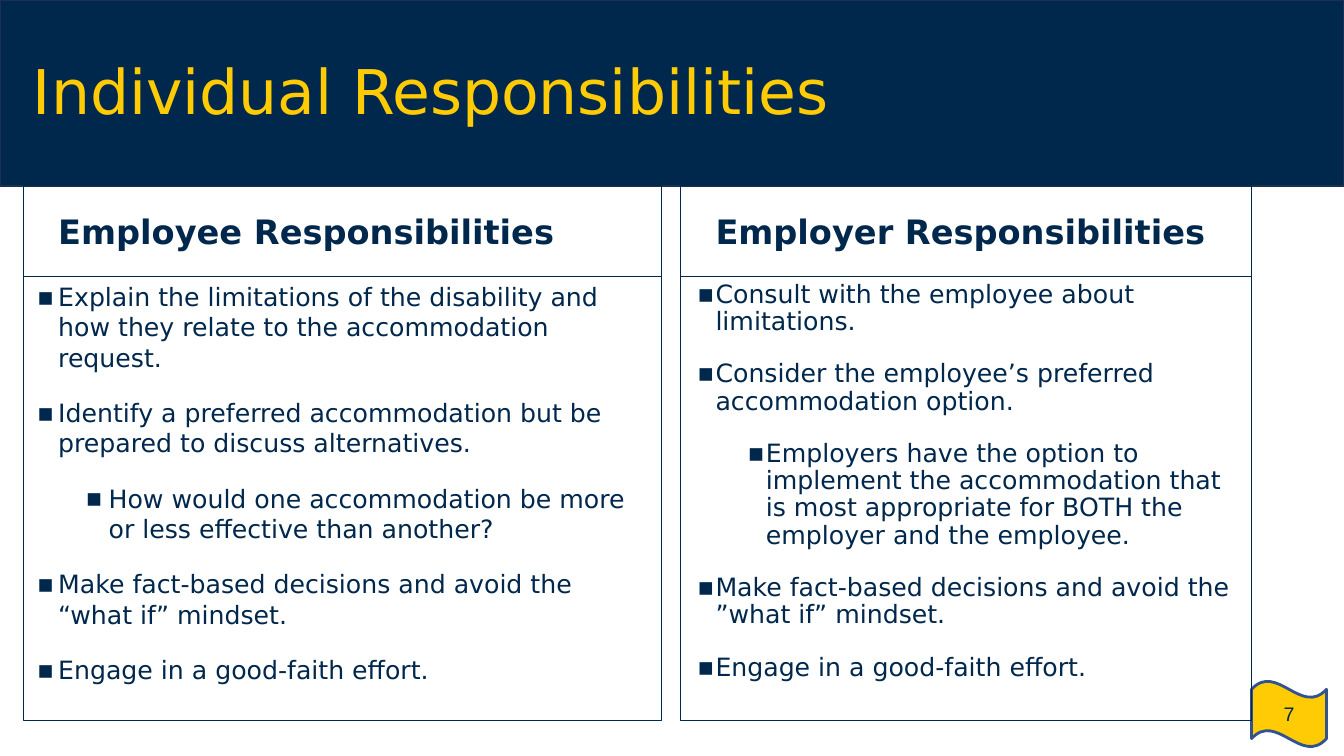
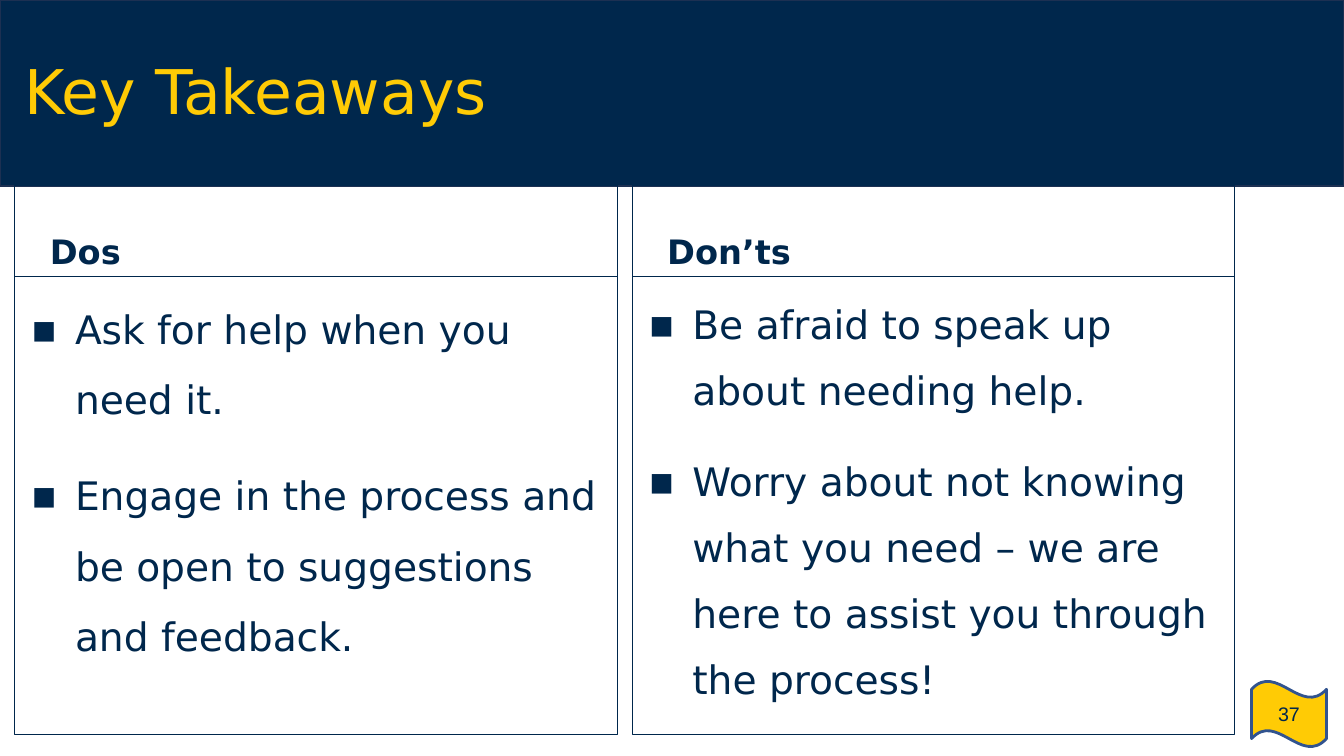
from dataclasses import dataclass

from lxml import etree
from pptx import Presentation
from pptx.dml.color import RGBColor
from pptx.enum.shapes import MSO_SHAPE
from pptx.enum.text import MSO_ANCHOR, PP_ALIGN
from pptx.oxml.ns import qn
from pptx.util import Pt

RECT, WAVE = MSO_SHAPE.RECTANGLE, MSO_SHAPE.WAVE
TOP, MIDDLE, BOTTOM = MSO_ANCHOR.TOP, MSO_ANCHOR.MIDDLE, MSO_ANCHOR.BOTTOM
LEFT, CENTER = PP_ALIGN.LEFT, PP_ALIGN.CENTER


@dataclass(frozen=True)
class Theme:
    navy: str = "00274C"
    maize: str = "FFCB05"
    band_line: str = "1C3052"
    wave_line: str = "31538F"
    font: str = "DejaVu Sans"
    number_font: str = "Arial"
    title_size: int = 44
    heading_size: int = 24
    number_size: int = 14
    gap: int = 18


THEME = Theme()
SLIDE_W, SLIDE_H = 960, 540
BAND_H = 133
HEAD_TOP, HEAD_H = 132.5, 65
BODY_TOP = HEAD_TOP + HEAD_H

# Bullets are (level, text); indents are (left, first line) for each level.
SLIDES = [
    dict(
        title="Individual Responsibilities", number="7", title_box=(16.5, 15, 828, 104.5),
        anchor=MIDDLE, body_h=317.5, size=18,
        columns=[
            dict(
                heading="Employee Responsibilities", x=16.5, w=456, spacing=1.0,
                indents=[(18, -15), (54, -16.5)],
                bullets=[
                    (0, "Explain the limitations of the disability and how they relate "
                        "to the accommodation request."),
                    (0, "Identify a preferred accommodation but be prepared to discuss "
                        "alternatives."),
                    (1, "How would one accommodation be more or less effective than another?"),
                    (0, "Make fact-based decisions and avoid the “what if” mindset."),
                    (0, "Engage in a good-faith effort."),
                ],
            ),
            dict(
                heading="Employer Responsibilities", x=486, w=408, spacing=0.9,
                indents=[(18, -13), (54, -13)],
                bullets=[
                    (0, "Consult with the employee about limitations."),
                    (0, "Consider the employee’s preferred accommodation option."),
                    (1, "Employers have the option to implement the accommodation that is "
                        "most appropriate for BOTH the employer and the employee."),
                    (0, "Make fact-based decisions and avoid the ”what if” mindset."),
                    (0, "Engage in a good-faith effort."),
                ],
            ),
        ],
    ),
    dict(
        title="Key Takeaways", number="37", title_box=(10.5, 15.5, 775.5, 104.5),
        anchor=BOTTOM, body_h=327.5, size=28,
        columns=[
            dict(
                heading="Dos", x=10.5, w=430.5, spacing=1.5, indents=[(36, -31.5)],
                bullets=[
                    (0, "Ask for help when you need it."),
                    (0, "Engage in the process and be open to suggestions and feedback."),
                ],
            ),
            dict(
                heading="Don’ts", x=451.5, w=430.5, spacing=1.4, indents=[(36, -31.5)],
                bullets=[
                    (0, "Be afraid to speak up about needing help."),
                    (0, "Worry about not knowing what you need – we are here to assist "
                        "you through the process!"),
                ],
            ),
        ],
    ),
]


def add_box(s, box, anchor=TOP, shape=RECT, fill=None, line=None, line_w=0.75):
    """Add a shape, unfilled and unlined unless told otherwise, ready for text."""
    sp = s.shapes.add_shape(shape, *(Pt(v) for v in box))
    sp.shadow.inherit = False
    if fill:
        sp.fill.solid()
        sp.fill.fore_color.rgb = RGBColor.from_string(fill)
    else:
        sp.fill.background()
    if line:
        sp.line.color.rgb = RGBColor.from_string(line)
        sp.line.width = Pt(line_w)
    else:
        sp.line.fill.background()
    sp.text_frame.word_wrap = True
    sp.text_frame.vertical_anchor = anchor
    return sp


def add_text(sp, text, size, color=THEME.navy, font=THEME.font, bold=False, align=LEFT,
             spacing=1.0, before=0, indent=(0, 0), level=0, bullet=False):
    """Write one paragraph, filling the empty first one before adding more."""
    tf = sp.text_frame
    p = tf.add_paragraph() if tf.text else tf.paragraphs[0]
    p.alignment, p.level = align, level
    p.line_spacing, p.space_before = spacing, Pt(before)
    pPr = p._p.get_or_add_pPr()
    pPr.set("marL", str(Pt(indent[0])))
    pPr.set("indent", str(Pt(indent[1])))
    if bullet:
        color_el = etree.SubElement(pPr, qn("a:buClr"))
        etree.SubElement(color_el, qn("a:srgbClr"), val=color)
        etree.SubElement(pPr, qn("a:buFont"), typeface=font)
        etree.SubElement(pPr, qn("a:buChar"), char="▪")
    r = p.add_run()
    r.text = text
    r.font.name, r.font.size, r.font.bold = font, Pt(size), bold
    r.font.color.rgb = RGBColor.from_string(color)


prs = Presentation()
prs.slide_width, prs.slide_height = Pt(SLIDE_W), Pt(SLIDE_H)

for page in SLIDES:
    s = prs.slides.add_slide(prs.slide_layouts[6])

    add_box(s, (0, 0, SLIDE_W, BAND_H), fill=THEME.navy, line=THEME.band_line, line_w=1)
    wave = add_box(s, (894, 486.5, 53.5, 47), MIDDLE, WAVE, THEME.maize, THEME.wave_line, 2)
    add_text(wave, page["number"], THEME.number_size, font=THEME.number_font, align=CENTER)

    title = add_box(s, page["title_box"], MIDDLE)
    add_text(title, page["title"], THEME.title_size, THEME.maize, spacing=0.9)

    for col in page["columns"]:
        x, w = col["x"], col["w"]
        head = add_box(s, (x, HEAD_TOP, w, HEAD_H), page["anchor"], line=THEME.navy)
        add_text(head, col["heading"], THEME.heading_size, bold=True,
                 before=THEME.gap, indent=(36, -18))

        body = add_box(s, (x, BODY_TOP, w, page["body_h"]), line=THEME.navy)
        for level, text in col["bullets"]:
            add_text(body, text, page["size"], spacing=col["spacing"], before=THEME.gap,
                     indent=col["indents"][level], level=level, bullet=True)

prs.save("out.pptx")
